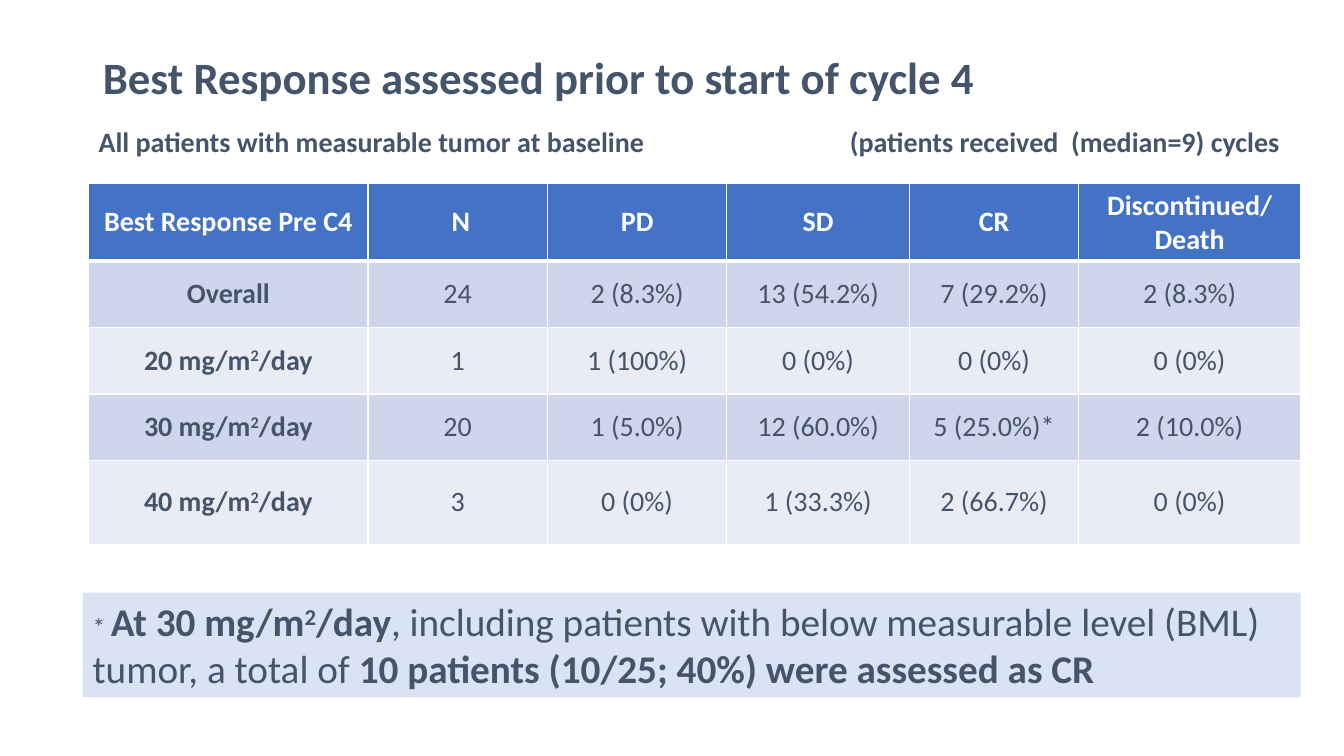
import pptx
import pptx.dml.color
import pptx.enum.shapes
import pptx.enum.text
import pptx.oxml
import pptx.oxml.ns
import pptx.util
from pptx.util import Inches

ALIGN = pptx.enum.text.PP_ALIGN
ANCHOR = pptx.enum.text.MSO_ANCHOR
AUTO_SIZE = pptx.enum.text.MSO_AUTO_SIZE

SLATE, WHITE, BLUE = "44546A", "FFFFFF", "4472C4"
BANDS = ["CFD5EA", "E9EBF5"]
NOTE_FILL = "DAE3F3"


def rgb(value):
    return pptx.dml.color.RGBColor.from_string(value)


class ResponseSlide:
    """Holds the text style and the slide being built."""

    font = "Calibri"

    def __init__(self, deck):
        self.slide = deck.slides.add_slide(deck.slide_layouts[5])

    def style_run(self, run, size, color, bold, raised=False):
        run.font.name = self.font
        run.font.size = pptx.util.Pt(size)
        run.font.bold = bold
        run.font.color.rgb = rgb(color)
        if raised:
            run.font._element.set("baseline", "30000")

    def style_text(self, frame, size, color, bold, align=ALIGN.LEFT):
        for paragraph in frame.paragraphs:
            paragraph.alignment = align
            for run in paragraph.runs:
                self.style_run(run, size, color, bold)

    def add_runs(self, paragraph, pieces, color=SLATE):
        """Each piece is (text, size, bold); ^ marks the raised character after it."""
        for text, size, bold in pieces:
            base, _, rest = text.partition("^")
            for part, raised in ((base, False), (rest[:1], True), (rest[1:], False)):
                if part:
                    run = paragraph.add_run()
                    run.text = part
                    self.style_run(run, size, color, bold, raised)

    def title(self, text, left, top, width, height):
        title = self.slide.shapes.title
        title.left, title.top = Inches(left), Inches(top)
        title.width, title.height = Inches(width), Inches(height)
        frame = title.text_frame
        frame.text = text
        frame.vertical_anchor = ANCHOR.MIDDLE
        frame.paragraphs[0].line_spacing = 0.9
        self.style_text(frame, 32, SLATE, True)

    def label(self, text, left, top, width, height):
        box = self.slide.shapes.add_textbox(
            Inches(left), Inches(top), Inches(width), Inches(height))
        frame = box.text_frame
        frame.text = text
        frame.word_wrap = False
        frame.auto_size = AUTO_SIZE.SHAPE_TO_FIT_TEXT
        self.style_text(frame, 20, SLATE, True)

    def note(self, pieces, left, top, width, height):
        panel = self.slide.shapes.add_shape(
            pptx.enum.shapes.MSO_SHAPE.RECTANGLE,
            Inches(left), Inches(top), Inches(width), Inches(height))
        panel.shadow.inherit = False
        panel.fill.solid()
        panel.fill.fore_color.rgb = rgb(NOTE_FILL)
        panel.line.fill.background()
        frame = panel.text_frame
        frame.word_wrap = True
        frame.auto_size = AUTO_SIZE.SHAPE_TO_FIT_TEXT
        frame.vertical_anchor = ANCHOR.TOP
        frame.paragraphs[0].alignment = ALIGN.LEFT
        self.add_runs(frame.paragraphs[0], pieces)

    def cell_borders(self, cell, widths):
        properties = cell._tc.get_or_add_tcPr()
        for index, (side, width) in enumerate(widths.items()):
            properties.insert(index, pptx.oxml.parse_xml(
                f'<a:ln{side} {pptx.oxml.ns.nsdecls("a")} w="{pptx.util.Pt(width)}">'
                f'<a:solidFill><a:srgbClr val="{WHITE}"/></a:solidFill></a:ln{side}>'))

    def table(self, rows, left, top, widths, heights):
        table = self.slide.shapes.add_table(
            len(rows), len(widths), Inches(left), Inches(top),
            Inches(sum(widths)), Inches(sum(heights))).table
        for column, width in zip(table.columns, widths):
            column.width = Inches(width)
        for table_row, height in zip(table.rows, heights):
            table_row.height = Inches(height)

        for r, row in enumerate(rows):
            header = r == 0
            for c, text in enumerate(row):
                cell = table.cell(r, c)
                cell.vertical_anchor = ANCHOR.MIDDLE
                cell.fill.solid()
                cell.fill.fore_color.rgb = rgb(BLUE if header else BANDS[(r - 1) % 2])
                self.cell_borders(cell, {"L": 1, "R": 1, "T": 3 if r == 1 else 1,
                                         "B": 3 if header else 1})
                frame = cell.text_frame
                if "^" in text:
                    frame.paragraphs[0].alignment = ALIGN.CENTER
                    self.add_runs(frame.paragraphs[0], [(text, 20, True)])
                else:
                    frame.text = text
                    self.style_text(frame, 20, WHITE if header else SLATE,
                                    header or c == 0, ALIGN.CENTER)


RESPONSES = [
    ["Best Response Pre C4", " N", "PD", "SD", "CR", "Discontinued/\nDeath"],
    ["Overall", "24", "2 (8.3%)", "13 (54.2%)", "7 (29.2%)", "2 (8.3%)"],
    ["20 mg/m^2/day", "1", "1 (100%)", "0 (0%)", "0 (0%)", "0 (0%)"],
    ["30 mg/m^2/day", "20", "1 (5.0%)", "12 (60.0%)", "5 (25.0%)*", "2 (10.0%)"],
    ["40 mg/m^2/day", "3", "0 (0%)", "1 (33.3%)", "2 (66.7%)", "0 (0%)"],
]

CR_NOTE = [
    ("* ", 18, False),
    ("At 30 mg/m^2/day", 28, True),
    (", including patients with below measurable level (BML) tumor, a total of ", 28, False),
    ("10 patients (10/25; 40%) were assessed as CR", 28, True),
]


def main():
    deck = pptx.Presentation()
    deck.slide_width, deck.slide_height = Inches(13.33), Inches(7.5)
    response = ResponseSlide(deck)

    # Title and table captions
    response.title("Best Response assessed prior to start of cycle 4", 0.92, 0.4, 11.5, 0.79)
    response.label("All patients with measurable tumor at baseline", 0.88, 1.19, 5.66, 0.44)
    response.label("(patients received  (median=9) cycles", 8.33, 1.19, 4.52, 0.44)

    # Best response by dose
    response.table(RESPONSES, 0.88, 1.82, [2.77, 1.78, 1.78, 1.81, 1.68, 2.2],
                   [0.77, 0.66, 0.66, 0.66, 0.83])

    # Footnote on complete responses
    response.note(CR_NOTE, 0.82, 5.88, 12.08, 1.04)

    deck.save("out.pptx")


if __name__ == "__main__":
    main()
